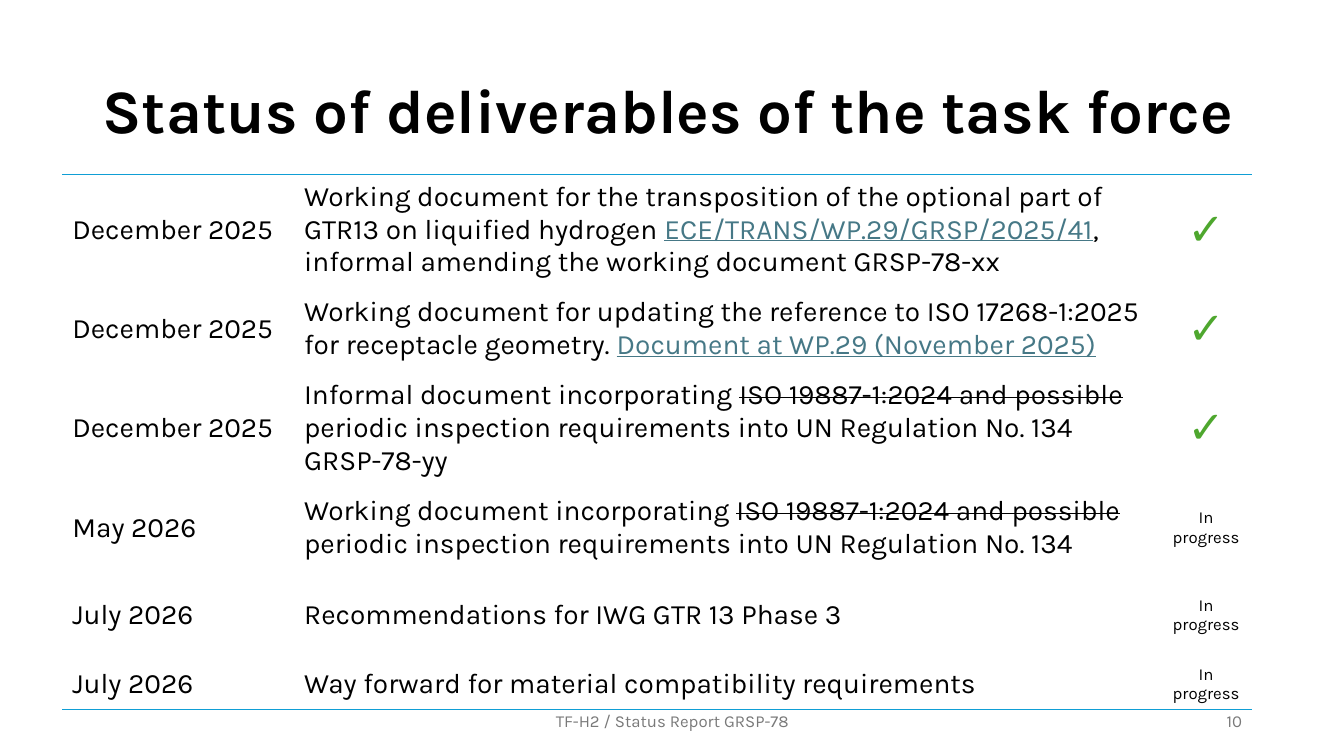
from lxml.etree import SubElement
from pptx import Presentation
from pptx.dml.color import RGBColor
from pptx.enum.text import MSO_ANCHOR, PP_ALIGN
from pptx.oxml import parse_xml
from pptx.oxml.ns import nsdecls, qn
from pptx.util import Cm, Pt

# Content
TITLE = "Status of deliverables of the task force"
FOOTER = "TF-H2 / Status Report GRSP-78"
NUMBER = "10"
DONE, OPEN = "✓", "In progress"

# Each row: date, paragraphs of (text, style) runs, status
ROWS = [
    ("December 2025",
     [[("Working document for the transposition of the optional part of "
        "GTR13 on liquified hydrogen ", ""),
       ("ECE/TRANS/WP.29/GRSP/2025/41", "link"),
       (", informal amending the working document GRSP-78-xx", "")]],
     DONE),
    ("December 2025",
     [[("Working document for updating the reference to ISO 17268-1:2025 "
        "for receptacle geometry. ", ""),
       ("Document at WP.29 (November 2025)", "link")]],
     DONE),
    ("December 2025",
     [[("Informal document incorporating ", ""),
       ("ISO 19887-1:2024 and possible", "strike"),
       (" periodic inspection requirements into UN Regulation No. 134", "")],
      [("GRSP-78-yy", "")]],
     DONE),
    ("May 2026",
     [[("Working document incorporating ", ""),
       ("ISO 19887-1:2024 and possible ", "strike"),
       ("periodic inspection requirements into UN Regulation No. 134", "")]],
     OPEN),
    ("July 2026", [[("Recommendations for IWG GTR 13 Phase 3", "")]], OPEN),
    ("July 2026",
     [[("Way forward for material compatibility requirements", "")]], OPEN),
]

# Look
FONT = "Karla"
BLACK = RGBColor(0x00, 0x00, 0x00)
GREY = RGBColor(0x79, 0x79, 0x79)
TEAL = RGBColor(0x46, 0x78, 0x86)
GREEN = RGBColor(0x4E, 0xA7, 0x2E)
BLUE = RGBColor(0x0F, 0x9E, 0xD5)
NO_STYLE = "{2D5ABB26-0587-4C30-8999-92F81FD0307C}"

# Sizes in cm
WIDTHS = [5.84, 21.84, 2.29]
HEIGHTS = [2.21, 2.21, 2.69, 2.21, 2.21, 1.24]
LEFT, TOP = 1.57, 4.39
FOOT_TOP, FOOT_HIGH = 17.65, 1.02


def style(run, size, color=BLACK, name=FONT, bold=False):
    font = run.font
    font.size, font.name, font.bold = Pt(size), name, bold
    font.color.rgb = color


def add_text(slide, place, text, size, color, align, bold=False):
    box = slide.shapes.add_textbox(*[Cm(n) for n in place])
    frame = box.text_frame
    frame.word_wrap = True
    frame.vertical_anchor = MSO_ANCHOR.MIDDLE
    frame.text = text
    para = frame.paragraphs[0]
    para.alignment = align
    style(para.runs[0], size, color, bold=bold)
    return para


def add_rule(cell, side):
    line = parse_xml(
        f'<a:{side} {nsdecls("a")} w="{Pt(1)}"><a:solidFill>'
        f'<a:srgbClr val="{BLUE}"/></a:solidFill></a:{side}>')
    cell._tc.get_or_add_tcPr().insert(0, line)


def fill_task(frame, paras):
    for i, runs in enumerate(paras):
        para = frame.add_paragraph() if i else frame.paragraphs[0]
        for text, kind in runs:
            run = para.add_run()
            run.text = text
            style(run, 20, TEAL if kind == "link" else BLACK)
            if kind == "link":
                run.font.underline = True
            elif kind == "strike":
                run.font._element.set("strike", "sngStrike")


def fill_status(frame, text):
    frame.text = text
    para = frame.paragraphs[0]
    para.alignment = PP_ALIGN.CENTER
    if text == DONE:
        style(para.runs[0], 32, GREEN, "Arial")
    else:
        style(para.runs[0], 12)


def add_grid(slide):
    shape = slide.shapes.add_table(
        len(ROWS), len(WIDTHS), Cm(LEFT), Cm(TOP),
        Cm(sum(WIDTHS)), Cm(sum(HEIGHTS)))
    table = shape.table
    table.first_row = table.horz_banding = False
    props = table._tbl.tblPr
    mark = props.find(qn("a:tableStyleId"))
    if mark is None:
        mark = SubElement(props, qn("a:tableStyleId"))
    mark.text = NO_STYLE
    for col, width in zip(table.columns, WIDTHS):
        col.width = Cm(width)
    for row, height, (date, task, status) in zip(table.rows, HEIGHTS, ROWS):
        row.height = Cm(height)
        when, what, state = [cell.text_frame for cell in row.cells]
        when.text = date
        style(when.paragraphs[0].runs[0], 20)
        fill_task(what, task)
        fill_status(state, status)
        for cell in row.cells:
            cell.vertical_anchor = MSO_ANCHOR.MIDDLE
            cell.fill.background()
    # Blue rules above the first row and below the last
    last = len(ROWS) - 1
    for i in range(len(WIDTHS)):
        add_rule(table.cell(0, i), "lnT")
        add_rule(table.cell(last, i), "lnB")


def main():
    deck = Presentation()
    deck.slide_width, deck.slide_height = Cm(33.87), Cm(19.05)
    slide = deck.slides.add_slide(deck.slide_layouts[6])
    # Title
    title = add_text(slide, (2.34, 1.02, 29.21, 3.68), TITLE, 44, BLACK,
                     PP_ALIGN.LEFT, bold=True)
    title.line_spacing = 0.9
    # Footer and page number
    add_text(slide, (11.23, FOOT_TOP, 11.43, FOOT_HIGH), FOOTER, 12, GREY,
             PP_ALIGN.CENTER)
    add_text(slide, (23.93, FOOT_TOP, 7.62, FOOT_HIGH), NUMBER, 12, GREY,
             PP_ALIGN.RIGHT)
    # Deliverables
    add_grid(slide)
    deck.save("out.pptx")


if __name__ == "__main__":
    main()
